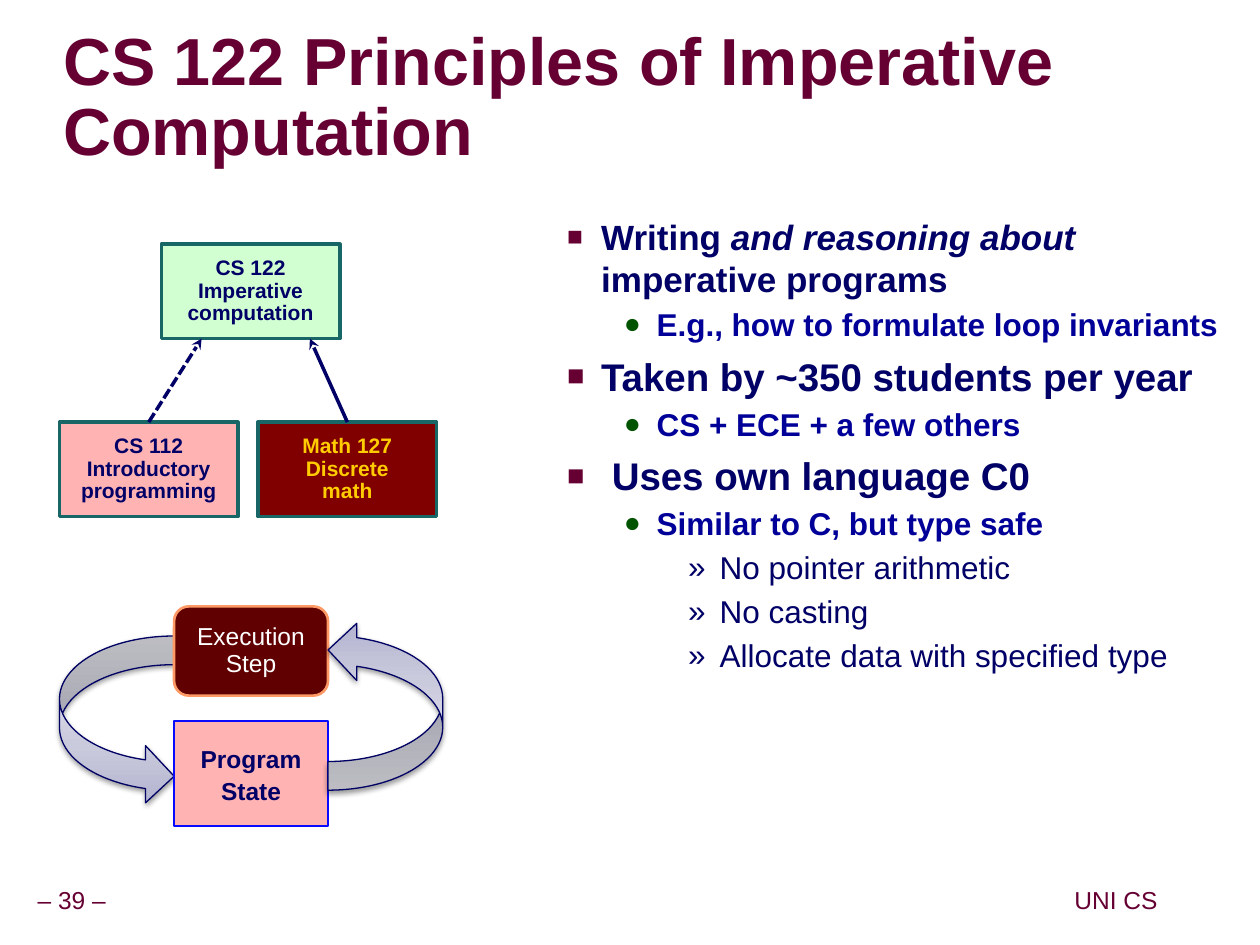
from pptx import Presentation
from pptx.dml.color import RGBColor
from pptx.enum.dml import MSO_LINE
from pptx.enum.shapes import MSO_CONNECTOR, MSO_SHAPE
from pptx.enum.text import MSO_ANCHOR, MSO_AUTO_SIZE, PP_ALIGN
from pptx.oxml import parse_xml
from pptx.oxml.ns import nsdecls, qn
from pptx.util import Pt

RECT = MSO_SHAPE.RECTANGLE
ROUND = MSO_SHAPE.ROUNDED_RECTANGLE
ARROW = MSO_SHAPE.CURVED_RIGHT_ARROW
STRAIGHT = MSO_CONNECTOR.STRAIGHT
DASH = MSO_LINE.SQUARE_DOT
MIDDLE, TOP = MSO_ANCHOR.MIDDLE, MSO_ANCHOR.TOP
LEFT, CENTER = PP_ALIGN.LEFT, PP_ALIGN.CENTER
NO_FIT = MSO_AUTO_SIZE.NONE

COLORS = {
    "maroon": "660033", "navy": "000066", "blue": "000099", "green": "005400",
    "mint": "D1FFD1", "pink": "FFB3B3", "red": "800000", "gold": "FFCC00",
    "teal": "196666", "state_line": "0A0AFF", "step": "600000",
    "step_line": "FF9966", "white": "FFFFFF", "arrow_line": "000064",
    "grad_start": "B3B3D0", "grad_mid": "CACADD", "grad_end": "EBEBF3",
    "shadow": "000000", "title_shadow": "969696",
}
BOX_W, BOX_H = 102, 54
BOX_TOP, COURSE_TOP = 139.5, 241.2
CYCLE_X, CYCLE_W = 99.5, 88
ARROW_W, ARROW_H = 65.5, 96.5

LEVELS = {
    1: dict(indent=(58.3, -19.4), line=1.0, before=25, color="navy", bold=True,
            bullet="■", bullet_color="maroon", bullet_size=75),
    2: dict(indent=(90, -18.7), line=1.07, before=10, color="blue", bold=True,
            bullet="●", bullet_color="green", bullet_size=90),
    3: dict(indent=(126, -18), line=1.0, before=20, color="navy", bold=False,
            bullet="»", bullet_color="navy", bullet_size=100),
}
BODY = [
    (1, 20, [("Writing ", False), ("and reasoning about", True),
             (" imperative programs", False)]),
    (2, 18, [("E.g., how to formulate loop invariants", False)]),
    (1, 22, [("Taken by ~350 students per year", False)]),
    (2, 18, [("CS + ECE + a few others", False)]),
    (1, 22, [(" Uses own language C0", False)]),
    (2, 18, [("Similar to C, but type safe", False)]),
    (3, 18, [("No pointer arithmetic", False)]),
    (3, 18, [("No casting", False)]),
    (3, 18, [("Allocate data with specified type", False)]),
]


def rgb(name):
    return RGBColor.from_string(COLORS[name])


def xml(tag, attrs="", inner=""):
    return parse_xml(f"<a:{tag} {nsdecls('a')} {attrs}>{inner}</a:{tag}>")


def color_xml(name, inner=""):
    return f'<a:srgbClr val="{COLORS[name]}">{inner}</a:srgbClr>'


def set_format(target, values):
    for name, value in values.items():
        setattr(target, name, value)


def add_run(p, text, size, color, bold=False, italic=False):
    r = p.add_run()
    r.text = text
    set_format(r.font, dict(size=Pt(size), bold=bold, italic=italic, name="Arial"))
    r.font.color.rgb = rgb(color)
    return r


def set_frame(tf, inset=(7.2, 3.6), wrap=True, anchor=MIDDLE):
    dx, dy = (Pt(v) for v in inset)
    set_format(tf, dict(margin_left=dx, margin_right=dx, margin_top=dy,
                        margin_bottom=dy, auto_size=NO_FIT, word_wrap=wrap,
                        vertical_anchor=anchor))


def add_lines(tf, lines, size, color, bold=False, spacing=0.9):
    for i, text in enumerate(lines):
        p = tf.add_paragraph() if i else tf.paragraphs[0]
        set_format(p, dict(alignment=CENTER, line_spacing=spacing))
        add_run(p, text, size, color, bold)


def place(sp, x, y, w, h):
    set_format(sp, dict(left=Pt(x), top=Pt(y), width=Pt(w), height=Pt(h)))


def add_title(sp, text):
    place(sp, 36, 30, 642, 54)
    set_frame(sp.text_frame, (0, 0))
    p = sp.text_frame.paragraphs[0]
    set_format(p, dict(alignment=LEFT, line_spacing=0.87))
    r = add_run(p, text, 38, "maroon", True)
    shadow = ('<a:outerShdw dist="50800" dir="2700000">'
              + color_xml("title_shadow") + "</a:outerShdw>")
    r.font._element.find(qn("a:solidFill")).addnext(xml("effectLst", "", shadow))


def add_body(sp):
    place(sp, 278, 119.5, 430.5, 348)
    tf = sp.text_frame
    set_frame(tf, anchor=TOP)
    for i, (level, size, runs) in enumerate(BODY):
        style = LEVELS[level]
        p = tf.add_paragraph() if i else tf.paragraphs[0]
        set_format(p, dict(level=level, alignment=LEFT, line_spacing=style["line"]))
        pPr = p._p.get_or_add_pPr()
        for name, value in zip(("marL", "indent"), style["indent"]):
            pPr.set(name, str(Pt(value)))
        before = f'<a:spcPct val="{style["before"] * 1000}"/>'
        for child in (
            xml("spcBef", "", before),
            xml("buClr", "", color_xml(style["bullet_color"])),
            xml("buSzPct", f'val="{style["bullet_size"] * 1000}"'),
            xml("buFont", 'typeface="Arial"'),
            xml("buChar", f'char="{style["bullet"]}"'),
        ):
            pPr.append(child)
        for text, italic in runs:
            add_run(p, text, size, style["color"], style["bold"], italic)


def add_label(shapes, box, text):
    s = shapes.add_textbox(*(Pt(v) for v in box))
    set_frame(s.text_frame, (3.6, 3.6), wrap=False)
    add_lines(s.text_frame, [text], 14, "maroon")


def add_shape(shapes, kind, box, line, width):
    s = shapes.add_shape(kind, *(Pt(v) for v in box))
    s.shadow.inherit = False
    s.line.color.rgb = rgb(line)
    s.line.width = Pt(width)
    return s


def add_course(shapes, x, y, lines, fill, color="navy"):
    s = add_shape(shapes, RECT, (x, y, BOX_W, BOX_H), "teal", 2)
    s.fill.solid()
    s.fill.fore_color.rgb = rgb(fill)
    set_frame(s.text_frame)
    add_lines(s.text_frame, lines, 12, color, True)
    return s


def add_link(shapes, course, x, dash=None):
    s = shapes.add_connector(STRAIGHT, course.left, course.top,
                             Pt(x), Pt(BOX_TOP + BOX_H))
    s.begin_connect(course, 0)
    s.line.color.rgb = rgb("navy")
    set_format(s.line, dict(width=Pt(2), dash_style=dash))
    s.line._get_or_add_ln().append(xml("tailEnd", 'type="stealth"'))
    s._element.spPr.append(xml("effectLst"))


def add_cycle_box(shapes, kind, y, h, lines, fill, line, color, bold, spacing):
    s = add_shape(shapes, kind, (CYCLE_X, y, CYCLE_W, h), line, 1.5)
    s.fill.solid()
    s.fill.fore_color.rgb = rgb(fill)
    set_frame(s.text_frame, (3.6, 3.6), wrap=False)
    add_lines(s.text_frame, lines, 14, color, bold, spacing)


def add_cycle_arrow(shapes, x, y, rotation=0):
    s = add_shape(shapes, ARROW, (x, y, ARROW_W, ARROW_H), "arrow_line", 0.75)
    s.rotation = rotation
    s.fill.gradient()
    stops = "".join(
        f'<a:gs pos="{pos * 1000}">{color_xml(name)}</a:gs>'
        for pos, name in ((0, "grad_start"), (35, "grad_mid"), (100, "grad_end")))
    spPr = s._element.spPr
    spPr.replace(spPr.find(qn("a:gradFill")), xml(
        "gradFill", 'rotWithShape="1"',
        f'<a:gsLst>{stops}</a:gsLst><a:lin ang="16200000" scaled="1"/>'))
    spPr.find(qn("a:effectLst")).append(xml(
        "outerShdw", 'blurRad="40000" dist="20000" dir="5400000" rotWithShape="0"',
        color_xml("shadow", '<a:alpha val="38000"/>')))


def main():
    prs = Presentation()
    set_format(prs, dict(slide_width=Pt(720), slide_height=Pt(540)))
    slide = prs.slides.add_slide(prs.slide_layouts[1])
    add_label(slide.shapes, (17.3, 504, 47.5, 22.3), "– 39 –")
    add_label(slide.shapes, (606, 503.5, 63.5, 23), "UNI CS")
    add_title(slide.shapes.title, "CS 122 Principles of Imperative Computation")
    add_body(slide.placeholders[1])

    courses = slide.shapes.add_group_shape().shapes
    add_course(courses, 92.2, BOX_TOP, ["CS 122", "Imperative", "computation"], "mint")
    intro = add_course(courses, 34, COURSE_TOP,
                       ["CS 112", "Introductory", "programming"], "pink")
    discrete = add_course(courses, 147.5, COURSE_TOP,
                          ["Math 127", "Discrete", "math"], "red", "gold")
    add_link(courses, intro, 115.2, DASH)
    add_link(courses, discrete, 177.1)

    cycle = slide.shapes.add_group_shape().shapes
    add_cycle_arrow(cycle, CYCLE_X - ARROW_W, 363.5)
    add_cycle_box(cycle, RECT, 412, 60, ["Program", "State"],
                  "pink", "state_line", "navy", True, 1.1)
    add_cycle_box(cycle, ROUND, 346.5, 51, ["Execution", "Step"],
                  "step", "step_line", "white", False, 0.9)
    add_cycle_arrow(cycle, CYCLE_X + CYCLE_W, 355, 180)
    prs.save("out.pptx")


if __name__ == "__main__":
    main()
